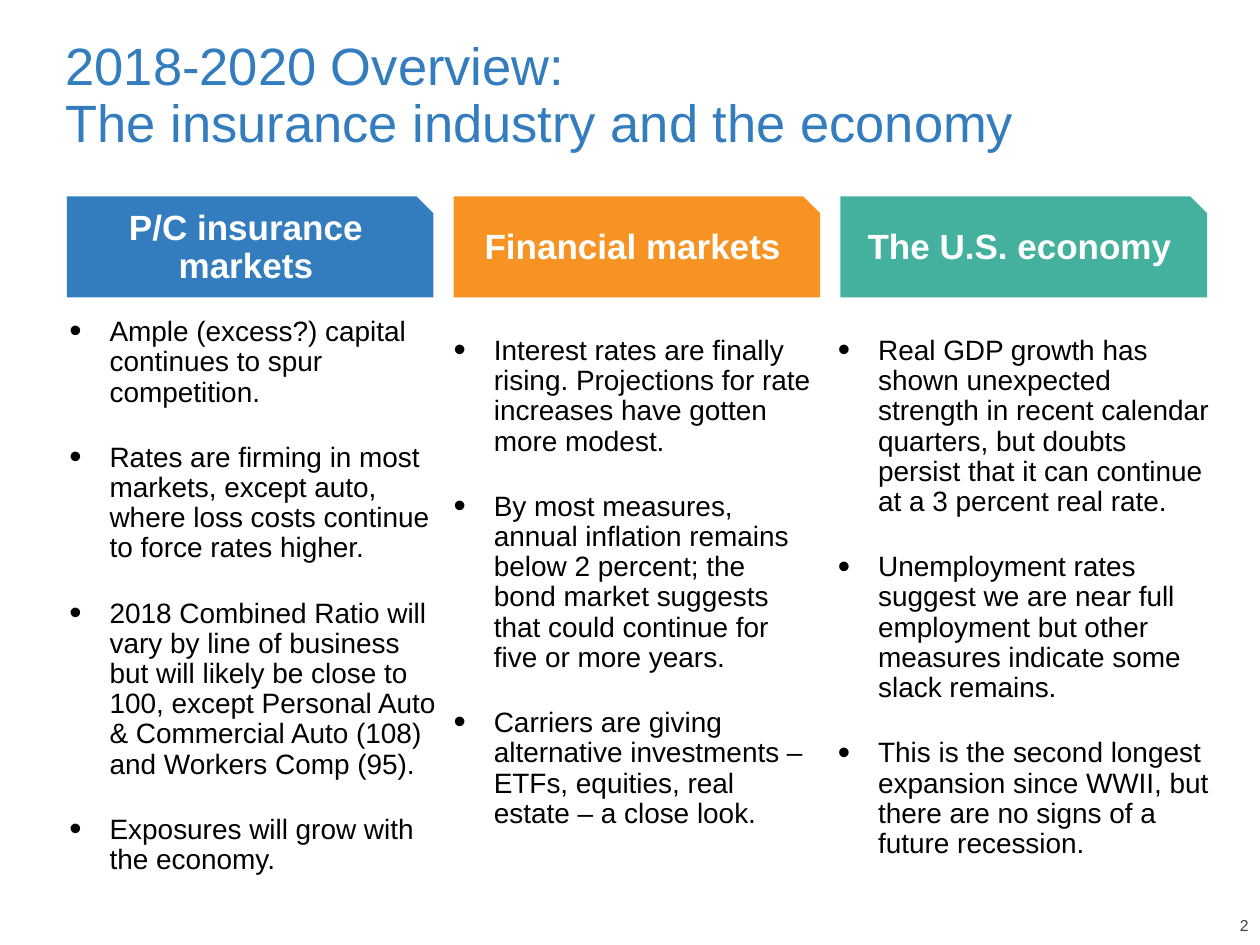
from lxml.etree import SubElement
from pptx import Presentation
from pptx.dml.color import RGBColor
from pptx.enum.shapes import MSO_SHAPE as Shape
from pptx.enum.text import MSO_ANCHOR as Anchor, PP_ALIGN as Align
from pptx.oxml.ns import qn
from pptx.util import Inches, Pt

# Content
TITLE = ["2018-2020 Overview:", "The insurance industry and the economy"]
PAGE_NUMBER = "2"
# Heading, colour, text box (left, top, width, height), bullets
COLUMNS = [
    ("P/C insurance markets", "337DBE", (0.55, 2.47, 2.91, 4.79), [
        "Ample (excess?) capital continues to spur competition.",
        "Rates are firming in most markets, except auto, where loss costs "
        "continue to force rates higher.",
        "2018 Combined Ratio will vary by line of business but will likely be "
        "close to 100, except Personal Auto & Commercial Auto (108) and "
        "Workers Comp (95).",
        "Exposures will grow with the economy.",
    ]),
    ("Financial markets", "F69322", (3.6, 2.62, 2.86, 4.07), [
        "Interest rates are finally rising. Projections for rate increases "
        "have gotten more modest.",
        "By most measures, annual inflation remains below 2 percent; the bond "
        "market suggests that could continue for five or more years.",
        "Carriers are giving alternative investments – ETFs, equities, real "
        "estate – a close look.",
    ]),
    ("The U.S. economy", "43B19E", (6.65, 2.62, 3, 4.26), [
        "Real GDP growth has shown unexpected strength in recent calendar "
        "quarters, but doubts persist that it can continue at a 3 percent "
        "real rate.",
        "Unemployment rates suggest we are near full employment but other "
        "measures indicate some slack remains.",
        "This is the second longest expansion since WWII, but there are no "
        "signs of a future recession.",
    ]),
]

# Layout
HEADING_LEFT, HEADING_TOP = 0.53, 1.56
HEADING_WIDTH, HEADING_HEIGHT = 2.91, 0.8
COLUMN_STEP = 3.07
BULLET_INDENT = 0.32


def color(value):
    return RGBColor.from_string(value)


def set_frame(shape, margins, anchor):
    frame = shape.text_frame
    frame.word_wrap = True
    frame.vertical_anchor = anchor
    (frame.margin_left, frame.margin_top,
     frame.margin_right, frame.margin_bottom) = map(Inches, margins)
    return frame


def add_run(paragraph, text, size, value, bold=False):
    paragraph.line_spacing = 0.9
    run = paragraph.add_run()
    run.text = text
    run.font.name = "Arial"
    run.font.size = Pt(size)
    run.font.bold = bold
    run.font.color.rgb = color(value)


def add_bullet(paragraph):
    properties = paragraph._p.get_or_add_pPr()
    properties.set("marL", str(Inches(BULLET_INDENT)))
    properties.set("indent", str(-Inches(BULLET_INDENT)))
    bullet_color = SubElement(properties, qn("a:buClr"))
    SubElement(bullet_color, qn("a:srgbClr"), val="000000")
    SubElement(properties, qn("a:buSzPct"), val="125000")
    SubElement(properties, qn("a:buFont"), typeface="Arial")
    SubElement(properties, qn("a:buChar"), char="•")


def add_heading(slide, index, text, fill):
    shape = slide.shapes.add_shape(
        Shape.SNIP_1_RECTANGLE,
        Inches(HEADING_LEFT + index * COLUMN_STEP), Inches(HEADING_TOP),
        Inches(HEADING_WIDTH), Inches(HEADING_HEIGHT))
    shape.shadow.inherit = False
    shape.fill.solid()
    shape.fill.fore_color.rgb = color(fill)
    shape.line.fill.background()
    frame = set_frame(shape, (0.1, 0.05, 0.1, 0.1), Anchor.MIDDLE)
    paragraph = frame.paragraphs[0]
    paragraph.alignment = Align.CENTER
    add_run(paragraph, text, 20, "FFFFFF", bold=True)


def add_bullets(slide, box, bullets):
    shape = slide.shapes.add_textbox(*map(Inches, box))
    frame = set_frame(shape, (0, 0.05, 0, 0.05), Anchor.TOP)
    for index, text in enumerate(bullets):
        paragraph = frame.add_paragraph() if index else frame.paragraphs[0]
        add_run(paragraph, text, 16, "000000")
        paragraph.space_before = Pt(20)
        add_bullet(paragraph)


def main():
    presentation = Presentation()
    presentation.slide_width = Inches(10)
    presentation.slide_height = Inches(7.5)
    slide = presentation.slides.add_slide(presentation.slide_layouts[5])

    # Title
    title = slide.shapes.title
    title.left, title.top, title.width, title.height = map(
        Inches, (0.42, 0.25, 9.25, 1.04))
    frame = set_frame(title, (0.1, 0.05, 0.1, 0.05), Anchor.MIDDLE)
    paragraph = frame.paragraphs[0]
    paragraph.alignment = Align.LEFT
    for index, line in enumerate(TITLE):
        if index:
            paragraph.add_line_break()
        add_run(paragraph, line, 30, "337DBE")

    # Columns
    for index, (heading, fill, box, bullets) in enumerate(COLUMNS):
        add_heading(slide, index, heading, fill)
        add_bullets(slide, box, bullets)

    # Page number
    number = slide.shapes.add_textbox(*map(Inches, (9.43, 7.29, 0.48, 0.13)))
    paragraph = set_frame(number, (0, 0, 0, 0), Anchor.BOTTOM).paragraphs[0]
    paragraph.alignment = Align.RIGHT
    add_run(paragraph, PAGE_NUMBER, 9, "404040")

    presentation.save("out.pptx")


if __name__ == "__main__":
    main()
